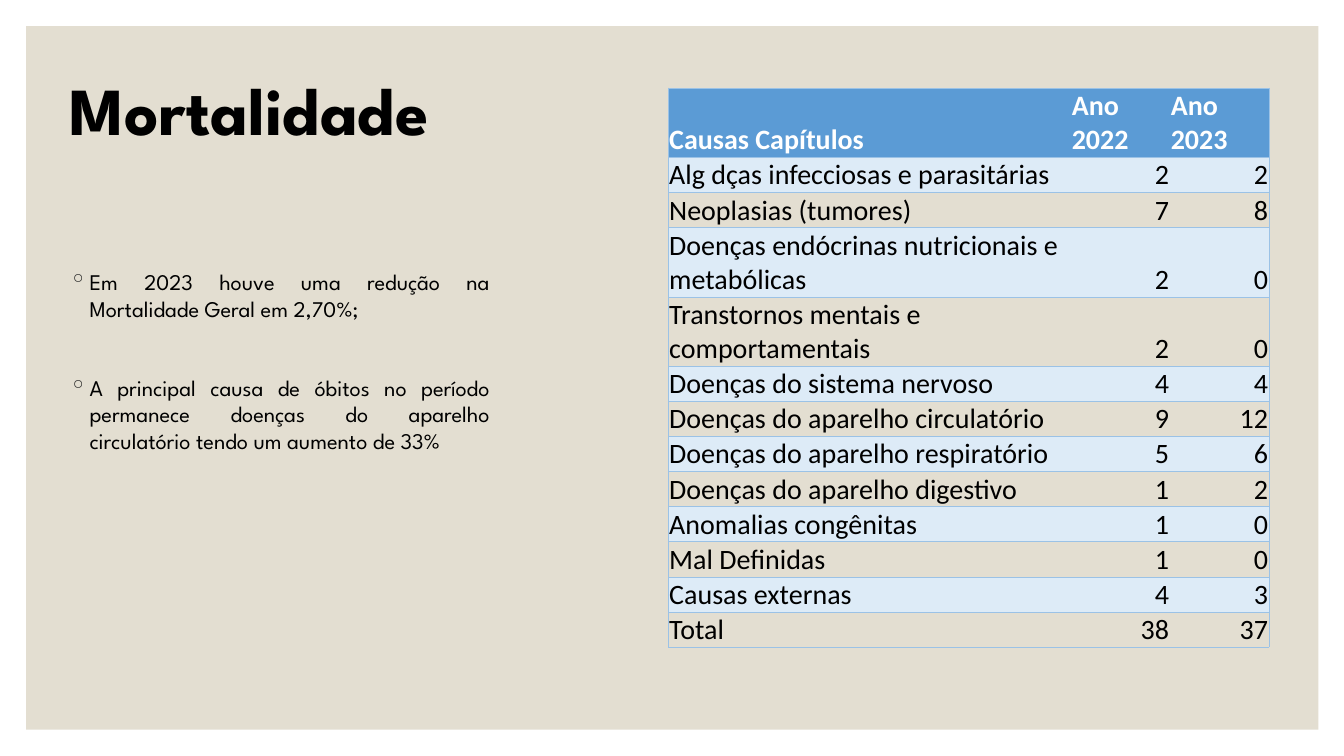
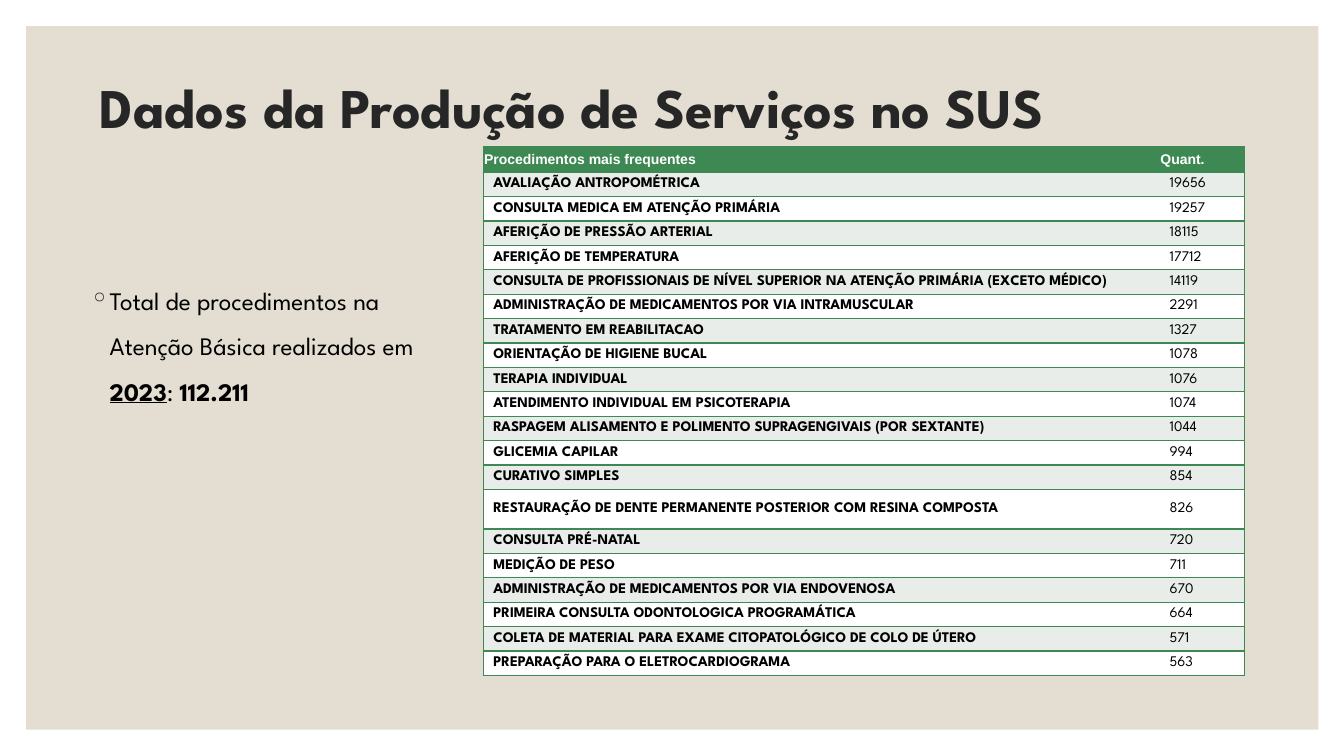
"""Build two health report slides, each with a title, notes and a table."""
from dataclasses import dataclass
from typing import Optional

from lxml import etree
from pptx import Presentation
from pptx import util as u
from pptx.dml import color as c
from pptx.enum import shapes as s
from pptx.enum import text as t
from pptx.oxml import ns

Pt = u.Pt
Rgb = c.RGBColor.from_string


@dataclass(frozen=True)
class Theme:
    face: str = "League Spartan"
    plate: str = "E3DED1"
    ink: str = "262626"
    black: str = "000000"
    white: str = "FFFFFF"
    blue: str = "5B9BD5"
    sky: str = "DDEBF7"
    rule: str = "9BC2E6"
    green: str = "3E8853"
    mint: str = "E8EDE9"
    large: float = 48
    title: float = 40
    lead: float = 18
    note: float = 16
    cause: float = 20
    head: float = 10
    proc: float = 10.5


THEME = Theme()


@dataclass(frozen=True)
class Box:
    left: float
    top: float
    width: float
    height: float

    def pts(self) -> tuple:
        return tuple(Pt(v) for v in (self.left, self.top, self.width, self.height))


@dataclass(frozen=True)
class Run:
    text: str
    bold: bool = False
    under: bool = False


@dataclass(frozen=True)
class Cell:
    size: float
    face: str
    color: str
    bold: tuple
    align: tuple
    pad: tuple


@dataclass(frozen=True)
class Grid:
    box: Box
    cols: tuple
    step: float
    tall: dict
    line: str
    weight: float
    fill: str
    bands: tuple
    anchor: t.MSO_ANCHOR
    head: Cell
    body: Cell


def write(frame, paras: list, *, size: float, face: str = THEME.face,
          color: str = THEME.black, align=t.PP_ALIGN.LEFT,
          anchor=t.MSO_ANCHOR.TOP, space: Optional[float] = None,
          gap: float = 0, bullet: bool = False) -> None:
    """Fill a text frame with paragraphs made of runs."""
    frame.word_wrap = True
    frame.vertical_anchor = anchor
    for i, runs in enumerate(paras):
        para = frame.paragraphs[0] if i == 0 else frame.add_paragraph()
        if bullet:
            prop = para._p.get_or_add_pPr()
            prop.set("marL", str(Pt(14.4)))
            prop.set("indent", str(Pt(-14.4)))
            tint = etree.SubElement(prop, ns.qn("a:buClr"))
            etree.SubElement(tint, ns.qn("a:srgbClr"), val=THEME.ink)
            etree.SubElement(prop, ns.qn("a:buChar"), char="◦")
        para.alignment = align
        if space:
            para.line_spacing = space
        if i and gap:
            para.space_before = Pt(gap)
        for item in runs:
            run = para.add_run()
            run.text = item.text
            font = run.font
            font.name, font.size = face, Pt(size)
            font.bold, font.underline = item.bold, item.under
            font.color.rgb = Rgb(color)


def label(slide, box: Box, paras: list, **form) -> None:
    """Add a text box."""
    write(slide.shapes.add_textbox(*box.pts()).text_frame, paras, **form)


def page(deck, title: str, box: Box, **form):
    """Add a slide with the shared plate and a title."""
    slide = deck.slides.add_slide(deck.slide_layouts[6])
    plate = slide.shapes.add_shape(s.MSO_SHAPE.RECTANGLE,
                                   *Box(18.72, 18.72, 923, 502.56).pts())
    plate.shadow.inherit = False
    plate.fill.solid()
    plate.fill.fore_color.rgb = Rgb(THEME.plate)
    plate.line.fill.background()
    label(slide, box, [[Run(title, True)]], anchor=t.MSO_ANCHOR.MIDDLE,
          space=0.9, **form)
    return slide


def edge(cell, sides: str, color: str, weight: float) -> None:
    """Draw cell borders on the given sides."""
    prop = cell._tc.get_or_add_tcPr()
    for side in sides:
        line = etree.SubElement(prop, ns.qn("a:ln" + side), w=str(Pt(weight)))
        fill = etree.SubElement(line, ns.qn("a:solidFill"))
        etree.SubElement(fill, ns.qn("a:srgbClr"), val=color)


def table(slide, grid: Grid, rows: list) -> None:
    """Add a banded table with a header row."""
    shape = slide.shapes.add_table(len(rows), len(grid.cols), *grid.box.pts())
    for style in shape.element.iter(ns.qn("a:tableStyleId")):
        style.text = "{2D5ABB26-0587-4C30-8999-92F81FD0307C}"
    tab = shape.table
    tab.horz_banding = False
    for col, width in zip(tab.columns, grid.cols):
        col.width = Pt(width)
    last = len(grid.cols) - 1
    for i, row in enumerate(rows):
        tab.rows[i].height = Pt(grid.tall.get(i, grid.step))
        look = grid.body if i else grid.head
        fill = grid.bands[(i - 1) % 2] if i else grid.fill
        for j, word in enumerate(row):
            cell = tab.cell(i, j)
            sides = ("L" if j == 0 else "") + ("R" if j == last else "") + "TB"
            edge(cell, sides, grid.line, grid.weight)
            if fill:
                cell.fill.solid()
                cell.fill.fore_color.rgb = Rgb(fill)
            else:
                cell.fill.background()
            side, top, base = look.pad
            cell.margin_left = cell.margin_right = Pt(side)
            cell.margin_top, cell.margin_bottom = Pt(top), Pt(base)
            write(cell.text_frame, [[Run(str(word), look.bold[j])]],
                  size=look.size, face=look.face, color=look.color,
                  align=look.align[j])
            cell.vertical_anchor = grid.anchor


LEFT, RIGHT = t.PP_ALIGN.LEFT, t.PP_ALIGN.RIGHT

DEATHS = Grid(
    Box(477.4, 62.9, 429, 402), (287.6, 70.7, 70.7), 25.1,
    {0: 49.5, 3: 49.5, 4: 49.5}, THEME.rule, 0.5, THEME.blue,
    (THEME.sky, None), t.MSO_ANCHOR.BOTTOM,
    Cell(THEME.cause, "Calibri", THEME.white, (True, True, True),
         (LEFT, LEFT, LEFT), (0.6, 0.6, 0)),
    Cell(THEME.cause, "Calibri", THEME.black, (False, False, False),
         (LEFT, RIGHT, RIGHT), (0.6, 0.6, 0)))

CARE = Grid(
    Box(345.2, 105, 543.6, 378), (483.1, 60.5), 17.46,
    {0: 18, 14: 28.2}, THEME.green, 1, THEME.green,
    (THEME.mint, THEME.white), t.MSO_ANCHOR.MIDDLE,
    Cell(THEME.head, "Arial", THEME.white, (True, True),
         (LEFT, LEFT), (0.6, 0.6, 0.6)),
    Cell(THEME.proc, THEME.face, THEME.black, (True, False),
         (LEFT, LEFT), (7.2, 0, 0)))

CAUSES = [
    ("Causas Capítulos", "Ano 2022", "Ano 2023"),
    ("Alg dças infecciosas e parasitárias", 2, 2),
    ("Neoplasias (tumores)", 7, 8),
    ("Doenças endócrinas nutricionais e metabólicas", 2, 0),
    ("Transtornos mentais e comportamentais", 2, 0),
    ("Doenças do sistema nervoso", 4, 4),
    ("Doenças do aparelho circulatório", 9, 12),
    ("Doenças do aparelho respiratório", 5, 6),
    ("Doenças do aparelho digestivo", 1, 2),
    ("Anomalias congênitas", 1, 0),
    ("Mal Definidas", 1, 0),
    ("Causas externas", 4, 3),
    ("Total", 38, 37),
]

PROCS = [
    ("Procedimentos mais frequentes", "Quant."),
    ("AVALIAÇÃO ANTROPOMÉTRICA", 19656),
    ("CONSULTA MEDICA EM ATENÇÃO PRIMÁRIA", 19257),
    ("AFERIÇÃO DE PRESSÃO ARTERIAL", 18115),
    ("AFERIÇÃO DE TEMPERATURA", 17712),
    ("CONSULTA DE PROFISSIONAIS DE NÍVEL SUPERIOR NA ATENÇÃO PRIMÁRIA (EXCETO MÉDICO)", 14119),
    ("ADMINISTRAÇÃO DE MEDICAMENTOS POR VIA INTRAMUSCULAR", 2291),
    ("TRATAMENTO EM REABILITACAO", 1327),
    ("ORIENTAÇÃO DE HIGIENE BUCAL", 1078),
    ("TERAPIA INDIVIDUAL", 1076),
    ("ATENDIMENTO INDIVIDUAL EM PSICOTERAPIA", 1074),
    ("RASPAGEM ALISAMENTO E POLIMENTO SUPRAGENGIVAIS (POR SEXTANTE)", 1044),
    ("GLICEMIA CAPILAR", 994),
    ("CURATIVO SIMPLES", 854),
    ("RESTAURAÇÃO DE DENTE PERMANENTE POSTERIOR COM RESINA COMPOSTA", 826),
    ("CONSULTA PRÉ-NATAL", 720),
    ("MEDIÇÃO DE PESO", 711),
    ("ADMINISTRAÇÃO DE MEDICAMENTOS POR VIA ENDOVENOSA", 670),
    ("PRIMEIRA CONSULTA ODONTOLOGICA PROGRAMÁTICA", 664),
    ("COLETA DE MATERIAL PARA EXAME CITOPATOLÓGICO DE COLO DE ÚTERO", 571),
    ("PREPARAÇÃO PARA O ELETROCARDIOGRAMA", 563),
]


def main() -> None:
    """Build and save the deck."""
    deck = Presentation()
    deck.slide_width, deck.slide_height = Pt(960), Pt(540)

    slide = page(deck, "Mortalidade", Box(42.5, 28.8, 851, 104.4),
                 size=THEME.large)
    label(slide, Box(42.5, 188, 314.6, 298.8), [
        [Run("Em 2023 houve uma redução na Mortalidade Geral em 2,70%;")],
        [Run("A principal causa de óbitos no período permanece doenças do "
             "aparelho circulatório tendo um aumento de 33%")],
    ], size=THEME.note, align=t.PP_ALIGN.JUSTIFY, gap=37, bullet=True)
    table(slide, DEATHS, CAUSES)

    slide = page(deck, "Dados da Produção de Serviços no SUS",
                 Box(64, 25.2, 792, 108), size=THEME.title, color=THEME.ink)
    label(slide, Box(56.9, 189.4, 270, 280), [[
        Run("Total de procedimentos na Atenção Básica realizados em "),
        Run("2023", True, True), Run(": "), Run("112.211", True),
    ]], size=THEME.lead, space=1.5, bullet=True)
    table(slide, CARE, PROCS)

    deck.save("out.pptx")


if __name__ == "__main__":
    main()
